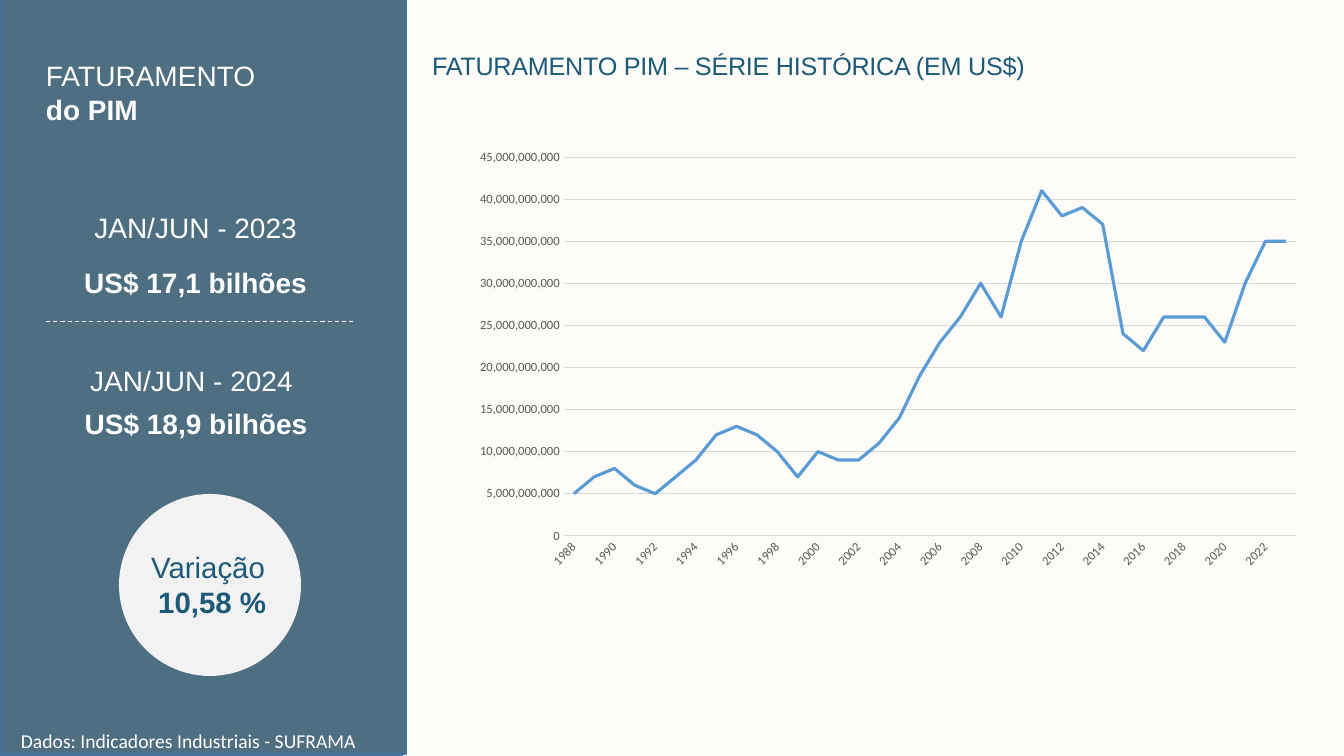
"""Build the PIM revenue slide with a summary panel and a historical line chart."""
import lxml.etree
import pptx
import pptx.chart.data
import pptx.dml.color
import pptx.enum.chart
import pptx.enum.dml
import pptx.enum.shapes
import pptx.enum.text
import pptx.oxml.ns
import pptx.util

RGB = pptx.dml.color.RGBColor
CREAM = RGB(0xFD, 0xFC, 0xF8)
SLATE = RGB(0x4E, 0x6E, 0x81)
EDGE = RGB(0x43, 0x73, 0x9E)
NAVY = RGB(0x1D, 0x5A, 0x78)
WHITE = RGB(0xFF, 0xFF, 0xFF)
PALE = RGB(0xF2, 0xF2, 0xF2)
GRID = RGB(0xD9, 0xD9, 0xD9)
GREY = RGB(0x59, 0x59, 0x59)
BLUE = RGB(0x5B, 0x9B, 0xD5)
BLACK = RGB(0, 0, 0)

LEFT = pptx.enum.text.PP_ALIGN.LEFT
CENTER = pptx.enum.text.PP_ALIGN.CENTER
SHAPES = pptx.enum.shapes.MSO_SHAPE

SIZE = (1344, 756)
TITLE = ("FATURAMENTO PIM – SÉRIE HISTÓRICA (EM US$)", (422, 45, 664, 40))
PANELS = [(0, 0, 402, 756), (4, -2, 402, 756)]
CIRCLE = (119, 494, 182, 182)
DIVIDER = (46, 322, 353, 322)
CHART = (463, 141, 850, 436)

LABEL = {"size": 20, "name": "Arial", "color": WHITE, "bold": False}
STRONG = {**LABEL, "bold": True}
CHANGE = {"size": 21, "name": "Arial", "color": NAVY, "bold": False}
HEADING = {**CHANGE, "size": 18}
SOURCE = {**LABEL, "size": 14, "name": "Calibri"}
AXIS = {"size": 9, "name": "Calibri", "color": GREY}

TEXTS = [
    ((36, 54, 286, 78), LEFT, [("FATURAMENTO", LABEL), ("do PIM", STRONG)]),
    ((44, 206, 311, 45), CENTER, [("JAN/JUN - 2023 ", LABEL)]),
    ((20, 261, 359, 44), CENTER, [("US$ 17,1 bilhões ", STRONG)]),
    ((36, 359, 311, 45), CENTER, [("JAN/JUN - 2024", LABEL)]),
    ((0, 402, 400, 44), CENTER, [("US$ 18,9 bilhões ", STRONG)]),
    ((119, 544, 178, 82), CENTER,
     [("Variação", CHANGE), (" 10,58 %", {**CHANGE, "bold": True})]),
    ((11, 724, 396, 34), LEFT,
     [("Dados: Indicadores Industriais - SUFRAMA", SOURCE)]),
]

FIRST_YEAR = 1988
BILLION = 10 ** 9
REVENUE = [5, 7, 8, 6, 5, 7, 9, 12, 13, 12, 10, 7, 10, 9, 9, 11, 14, 19,
           23, 26, 30, 26, 35, 41, 38, 39, 37, 24, 22, 26, 26, 26, 23, 30, 35, 35]


def px(*lengths):
    return [pptx.util.Emu(round(n * 914400 / 100.8)) for n in lengths]


def style(font, values):
    for key, value in values.items():
        if key == "color":
            font.color.rgb = value
        else:
            setattr(font, key, pptx.util.Pt(value) if key == "size" else value)


def write(sp, align, lines):
    tf = sp.text_frame
    tf.word_wrap = True
    tf.auto_size = pptx.enum.text.MSO_AUTO_SIZE.SHAPE_TO_FIT_TEXT
    tf.vertical_anchor = pptx.enum.text.MSO_ANCHOR.TOP
    for i, (text, values) in enumerate(lines):
        p = tf.add_paragraph() if i else tf.paragraphs[0]
        p.alignment = align
        r = p.add_run()
        r.text = text
        style(r.font, values)


def add_filled(s, kind, box, fill, edge=None):
    sp = s.shapes.add_shape(kind, *px(*box))
    sp.shadow.inherit = False
    sp.fill.solid()
    sp.fill.fore_color.rgb = fill
    if edge is None:
        sp.line.fill.background()
    else:
        stroke(sp.line, edge, 1)


def stroke(line, color, width):
    line.color.rgb = color
    line.width = pptx.util.Pt(width)


def add_title(s):
    text, box = TITLE
    sp = s.shapes.title
    sp.left, sp.top, sp.width, sp.height = px(*box)
    write(sp, LEFT, [(text, HEADING)])
    r = sp.text_frame.paragraphs[0].runs[0]
    r._r.get_or_add_rPr().set("spc", "-20")


def add_divider(s):
    line = s.shapes.add_connector(
        pptx.enum.shapes.MSO_CONNECTOR.STRAIGHT, *px(*DIVIDER))
    stroke(line.line, WHITE, 0.75)
    line.line.dash_style = pptx.enum.dml.MSO_LINE.DASH
    lxml.etree.SubElement(line._element.spPr, pptx.oxml.ns.qn("a:effectLst"))


def add_revenue_chart(s):
    data = pptx.chart.data.CategoryChartData(number_format="#,##0")
    data.categories = [str(FIRST_YEAR + i) for i in range(len(REVENUE))]
    data.add_series("Series 1", [n * BILLION for n in REVENUE])
    chart = s.shapes.add_chart(
        pptx.enum.chart.XL_CHART_TYPE.LINE, *px(*CHART), data).chart
    chart.has_legend = chart.has_title = False
    style(chart.font, {"size": 10, "name": "Calibri", "color": BLACK})

    plot = chart.plots[0]
    plot.vary_by_categories = False
    series = plot.series[0]
    series.smooth = False
    series.marker.style = pptx.enum.chart.XL_MARKER_STYLE.NONE
    stroke(series.format.line, BLUE, 2.25)

    years, amounts = chart.category_axis, chart.value_axis
    for axis in (years, amounts):
        axis.major_tick_mark = axis.minor_tick_mark = pptx.enum.chart.XL_TICK_MARK.NONE
        style(axis.tick_labels.font, AXIS)
    years.has_major_gridlines = False
    stroke(years.format.line, GRID, 0.75)
    body = years._element.find(".//" + pptx.oxml.ns.qn("a:bodyPr"))
    body.set("rot", "-2700000")
    body.set("vert", "horz")

    amounts.minimum_scale = 0
    amounts.maximum_scale = 45 * BILLION
    amounts.major_unit = 5 * BILLION
    amounts.tick_labels.number_format = "#,##0"
    amounts.tick_labels.number_format_is_linked = False
    amounts.format.line.fill.background()
    stroke(amounts.major_gridlines.format.line, GRID, 0.75)


def main():
    prs = pptx.Presentation()
    prs.slide_width, prs.slide_height = px(*SIZE)
    s = prs.slides.add_slide(prs.slide_layouts[5])
    s.background.fill.solid()
    s.background.fill.fore_color.rgb = CREAM
    add_title(s)
    for box in PANELS:
        add_filled(s, SHAPES.RECTANGLE, box, SLATE, EDGE)
    add_filled(s, SHAPES.OVAL, CIRCLE, PALE)
    for box, align, lines in TEXTS:
        write(s.shapes.add_textbox(*px(*box)), align, lines)
    add_divider(s)
    add_revenue_chart(s)
    prs.save("out.pptx")


if __name__ == "__main__":
    main()
